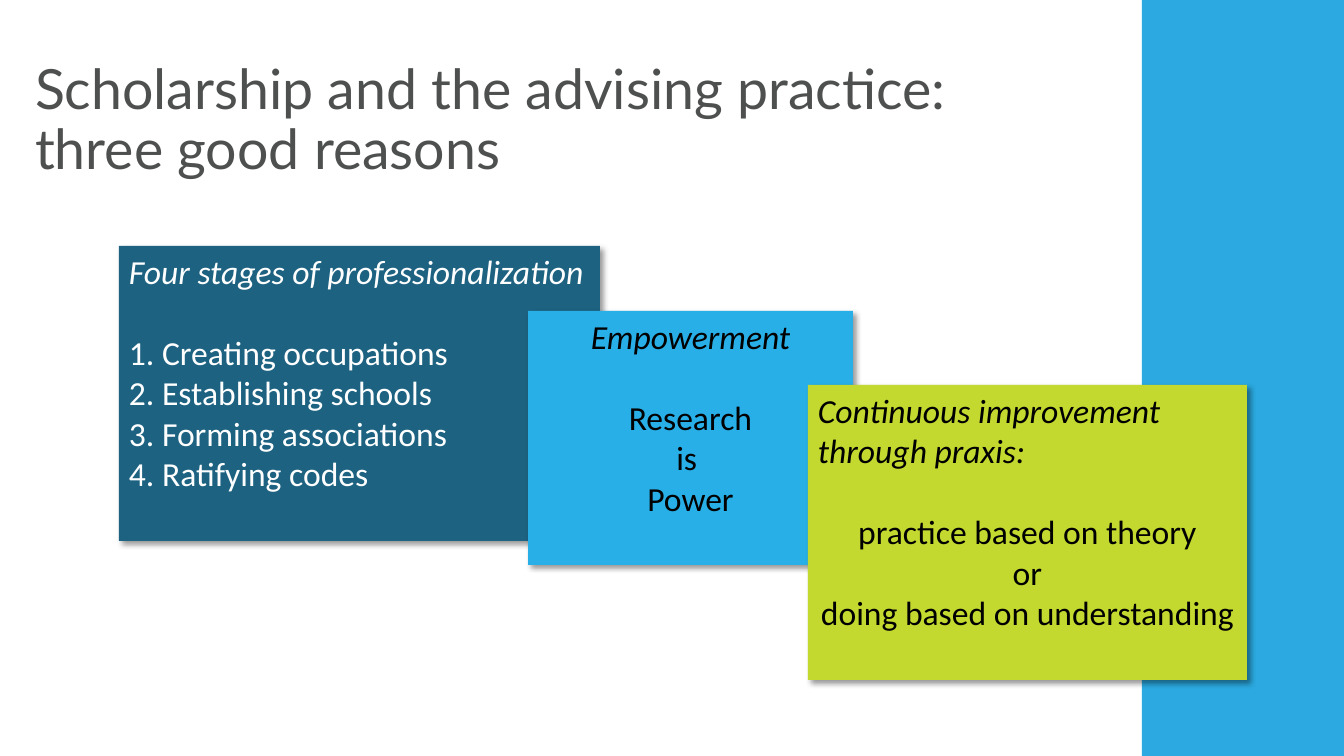
from lxml import etree
from pptx import Presentation
from pptx.dml.color import RGBColor
from pptx.enum.shapes import MSO_SHAPE
from pptx.enum.text import MSO_ANCHOR, PP_ALIGN
from pptx.oxml.ns import qn
from pptx.util import Pt

RECTANGLE = MSO_SHAPE.RECTANGLE
TOP, MIDDLE = MSO_ANCHOR.TOP, MSO_ANCHOR.MIDDLE
LEFT, CENTER = PP_ALIGN.LEFT, PP_ALIGN.CENTER

EMU_PER_PX = 914400 / 100.8
TITLE_ONLY = 5
BODY_SIZE = 24
HEADING_GAP = 29
SIDE_INSET, EDGE_INSET = 10, 5


def px(length):
    return round(length * EMU_PER_PX)


def color(hex_value):
    return RGBColor.from_string(hex_value)


def add_panel(slide, box, fill):
    panel = slide.shapes.add_shape(RECTANGLE, *map(px, box))
    panel.shadow.inherit = False
    panel.fill.solid()
    panel.fill.fore_color.rgb = color(fill)
    panel.line.fill.background()
    return panel


def add_soft_shadow(panel):
    effects = panel._element.spPr.find(qn("a:effectLst"))
    shadow = etree.SubElement(
        effects, qn("a:outerShdw"), blurRad=str(Pt(4)), dist=str(Pt(3)),
        dir=str(45 * 60000), algn="tl", rotWithShape="0")
    tint = etree.SubElement(shadow, qn("a:srgbClr"), val="000000")
    etree.SubElement(tint, qn("a:alpha"), val="40000")


def set_insets(frame, bottom=EDGE_INSET):
    frame.margin_left = frame.margin_right = px(SIDE_INSET)
    frame.margin_top, frame.margin_bottom = px(EDGE_INSET), px(bottom)


def style_run(run, font_name, size, hex_value, italic=False):
    run.font.name = font_name
    run.font.size = Pt(size)
    run.font.italic = italic
    run.font.color.rgb = color(hex_value)


def place_title(slide, box, lines):
    title = slide.shapes.title
    title.left, title.top, title.width, title.height = map(px, box)
    frame = title.text_frame
    frame.word_wrap = True
    frame.vertical_anchor = MIDDLE
    set_insets(frame, bottom=65)
    paragraph = frame.paragraphs[0]
    paragraph.alignment = LEFT
    paragraph.line_spacing = 0.9
    for index, line in enumerate(lines):
        if index:
            paragraph.add_line_break()
        run = paragraph.add_run()
        run.text = line
        style_run(run, "Lato", 39.6, "4E4F4F")


def add_reason(slide, box, fill, ink, heading, details,
               heading_align, detail_align, wrap):
    card = add_panel(slide, box, fill)
    add_soft_shadow(card)
    frame = card.text_frame
    frame.word_wrap = wrap
    frame.vertical_anchor = TOP
    set_insets(frame)
    for index, line in enumerate(heading + details):
        is_heading = index < len(heading)
        paragraph = frame.paragraphs[0] if index == 0 else frame.add_paragraph()
        paragraph.alignment = heading_align if is_heading else detail_align
        if index == len(heading):
            paragraph.space_before = Pt(HEADING_GAP)
        run = paragraph.add_run()
        run.text = line
        style_run(run, "Calibri", BODY_SIZE, ink, italic=is_heading)


def build_reasons_slide(presentation):
    slide = presentation.slides.add_slide(presentation.slide_layouts[TITLE_ONLY])
    add_panel(slide, (1142, 0, 202, 756), "2BA9E0")
    place_title(slide, (25, 77, 1089, 149),
                ["Scholarship and the advising practice:", "three good reasons"])
    add_reason(slide, (119, 246, 481, 295), "1D6281", "FFFFFF",
               ["Four stages of professionalization"],
               ["1. Creating occupations", "2. Establishing schools",
                "3. Forming associations", "4. Ratifying codes"],
               LEFT, LEFT, wrap=False)
    add_reason(slide, (528, 311, 325, 254), "29AFE7", "000000",
               ["Empowerment"], ["Research", "is ", "Power"],
               CENTER, CENTER, wrap=True)
    add_reason(slide, (808, 385, 439, 295), "C4D92F", "000000",
               ["Continuous improvement", "through praxis:"],
               ["practice based on theory", "or", "doing based on understanding"],
               LEFT, CENTER, wrap=False)


def main():
    presentation = Presentation()
    presentation.slide_width, presentation.slide_height = px(1344), px(756)
    build_reasons_slide(presentation)
    presentation.save("out.pptx")


if __name__ == "__main__":
    main()
